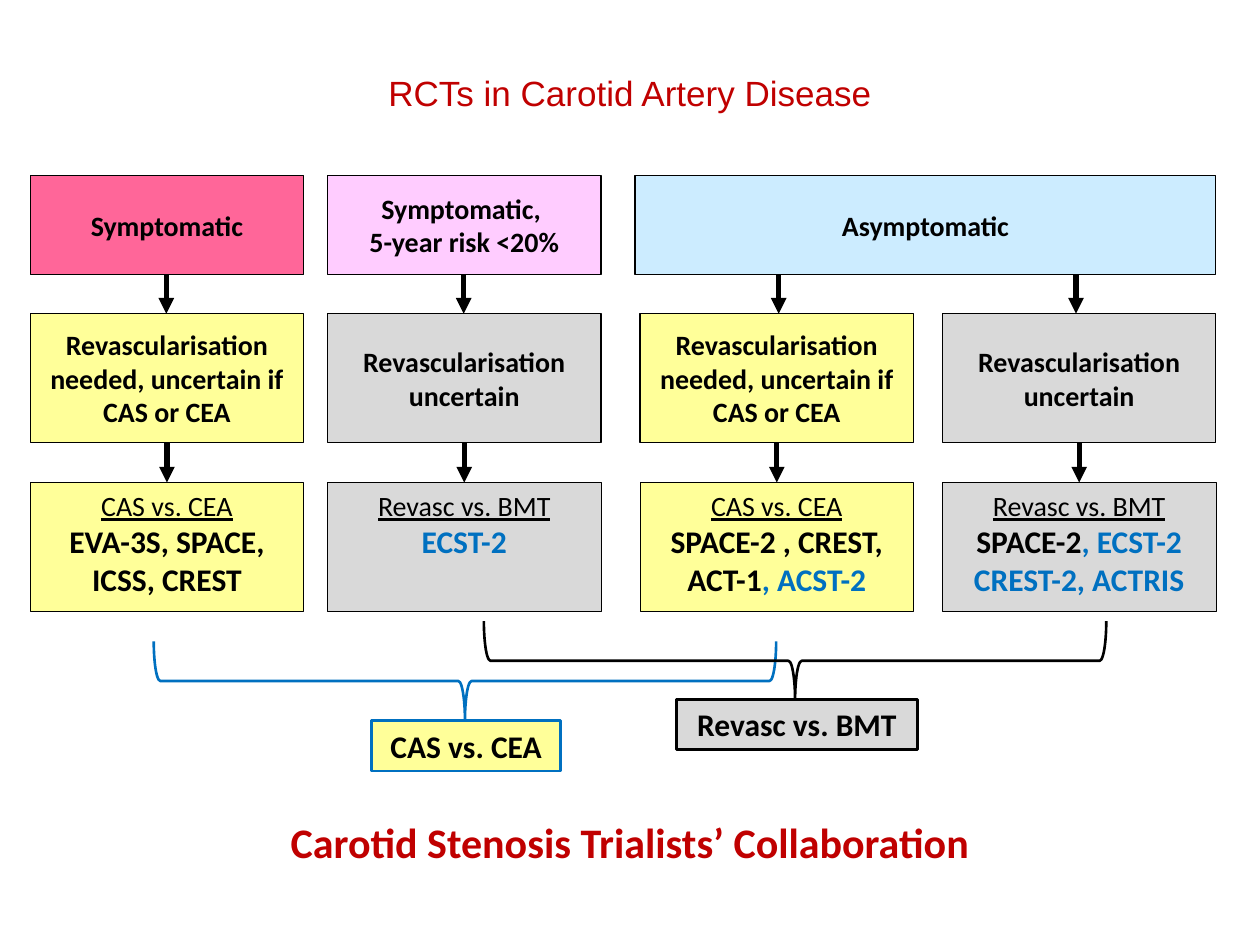
from lxml import etree
from pptx import Presentation
from pptx.dml.color import RGBColor
from pptx.enum.shapes import MSO_CONNECTOR as Connector, MSO_SHAPE as Shape
from pptx.enum.text import MSO_ANCHOR as Anchor, PP_ALIGN as Align
from pptx.oxml.ns import qn
from pptx.util import Inches, Pt

BLACK, RED, BLUE = "000000", "C00000", "0070C0"
YELLOW, GREY = "FFFF99", "D9D9D9"

HEADING = {"size": Pt(16), "bold": True}
COMPARISON = {"size": Pt(16), "underline": True}
TRIALS = {"size": Pt(18), "bold": True}
ONGOING = {**TRIALS, "color": BLUE}
TITLE = {"size": Pt(20), "name": "Arial", "color": RED}
FOOTER = {"size": Pt(24), "bold": True, "color": RED}

COLUMN_WIDTH = 2.17
HEADER_TOP, HEADER_HEIGHT = 1.39, 0.79
DECISION_TOP, TRIALS_TOP, ROW_HEIGHT = 2.49, 3.83, 1.02

NEEDED = "Revascularisation needed, uncertain if CAS or CEA"
UNCERTAIN = "Revascularisation uncertain"
CAS_CEA, REVASC_BMT = "CAS vs. CEA", "Revasc vs. BMT"

# left, arrow centre under the header, fill, decision, paragraphs of trials
COLUMNS = [
    (0.24, 1.32, YELLOW, NEEDED,
     [[(CAS_CEA, COMPARISON)],
      [("EVA-3S, SPACE, ICSS, CREST", TRIALS)]]),
    (2.6, 3.68, GREY, UNCERTAIN,
     [[(REVASC_BMT, COMPARISON)],
      [("ECST-2", ONGOING)]]),
    (5.08, 6.18, YELLOW, NEEDED,
     [[(CAS_CEA, COMPARISON)],
      [("SPACE-2 , CREST, ACT-1", TRIALS), (", ACST-2", ONGOING)]]),
    (7.48, 8.54, GREY, UNCERTAIN,
     [[(REVASC_BMT + " ", COMPARISON), ("SPACE-2", TRIALS), (", ECST-2", ONGOING)],
      [("CREST-2, ACTRIS", ONGOING)]]),
]

# left, width, fill, text
HEADERS = [
    (0.24, COLUMN_WIDTH, "FF6699", "Symptomatic"),
    (2.6, COLUMN_WIDTH, "FFCCFF", "Symptomatic, \n5-year risk <20%"),
    (5.04, 4.61, "CCECFF", "Asymptomatic"),
]


def rgb(value):
    return RGBColor.from_string(value)


def write(frame, paragraphs, anchor=Anchor.TOP):
    """Fill a text frame with centred paragraphs, each a list of (text, format)."""
    frame.word_wrap = True
    frame.vertical_anchor = anchor
    for index, spans in enumerate(paragraphs):
        para = frame.paragraphs[0] if index == 0 else frame.add_paragraph()
        para.alignment = Align.CENTER
        for text, look in spans:
            values = {"name": "Calibri", "color": BLACK, **look}
            color = values.pop("color")
            for number, line in enumerate(text.split("\n")):
                if number:
                    para.add_line_break()
                span = para.add_run()
                span.text = line
                span.font.color.rgb = rgb(color)
                for key, value in values.items():
                    setattr(span.font, key, value)


def add_outline(page, kind, box, line, weight):
    shape = page.shapes.add_shape(kind, *map(Inches, box))
    shape.shadow.inherit = False
    shape.line.color.rgb = rgb(line)
    shape.line.width = Pt(weight)
    return shape


def add_box(page, box, fill, paragraphs, anchor=Anchor.TOP, line=BLACK, weight=0.75):
    shape = add_outline(page, Shape.RECTANGLE, box, line, weight)
    shape.fill.solid()
    shape.fill.fore_color.rgb = rgb(fill)
    write(shape.text_frame, paragraphs, anchor)


def add_caption(page, box, text, look):
    caption = page.shapes.add_textbox(*map(Inches, box))
    write(caption.text_frame, [[(text, look)]])


def add_down_arrow(page, center, top, bottom):
    ends = map(Inches, (center, top, center, bottom))
    arrow = page.shapes.add_connector(Connector.STRAIGHT, *ends)
    arrow.line.color.rgb = rgb(BLACK)
    arrow.line.width = Pt(3)
    etree.SubElement(arrow.line._get_or_add_ln(), qn("a:tailEnd"), type="triangle")
    etree.SubElement(arrow._element.spPr, qn("a:effectLst"))


def add_column(page, left, arrow_center, fill, decision, trials):
    add_box(page, (left, DECISION_TOP, COLUMN_WIDTH, ROW_HEIGHT), fill,
            [[(decision, HEADING)]], Anchor.MIDDLE)
    add_box(page, (left, TRIALS_TOP, COLUMN_WIDTH, ROW_HEIGHT), fill,
            trials, weight=0.25)
    add_down_arrow(page, arrow_center, HEADER_TOP + HEADER_HEIGHT, DECISION_TOP)
    add_down_arrow(page, left + COLUMN_WIDTH / 2, DECISION_TOP + ROW_HEIGHT, TRIALS_TOP)


def add_pooled_group(page, brace_box, label_box, fill, line, text):
    """Draw a brace pointing down from brace_box, and the label below it."""
    left, top, width, height = brace_box
    shift = (width - height) / 2
    turned_box = (left + shift, top - shift, height, width)
    brace = add_outline(page, Shape.RIGHT_BRACE, turned_box, line, 1.5)
    brace.fill.background()
    brace.rotation = 90
    add_box(page, label_box, fill, [[(text, TRIALS)]], line=line, weight=1.5)


def main():
    deck = Presentation()
    deck.slide_width, deck.slide_height = Inches(10), Inches(7.5)
    page = deck.slides.add_slide(deck.slide_layouts[6])

    add_caption(page, (0.46, 0.52, 9.08, 1.08), "RCTs in Carotid Artery Disease", TITLE)
    for left, width, fill, text in HEADERS:
        add_box(page, (left, HEADER_TOP, width, HEADER_HEIGHT), fill,
                [[(text, HEADING)]], Anchor.MIDDLE)
    for column in COLUMNS:
        add_column(page, *column)
    add_pooled_group(page, (1.22, 5.09, 4.94, 0.63), (2.95, 5.72, 1.5, 0.4),
                     YELLOW, BLUE, CAS_CEA)
    add_pooled_group(page, (3.84, 4.93, 4.94, 0.63), (5.37, 5.55, 1.91, 0.4),
                     GREY, BLACK, REVASC_BMT)
    add_caption(page, (1.22, 6.43, 7.56, 0.5),
                "Carotid Stenosis Trialists’ Collaboration", FOOTER)
    deck.save("out.pptx")


if __name__ == "__main__":
    main()
